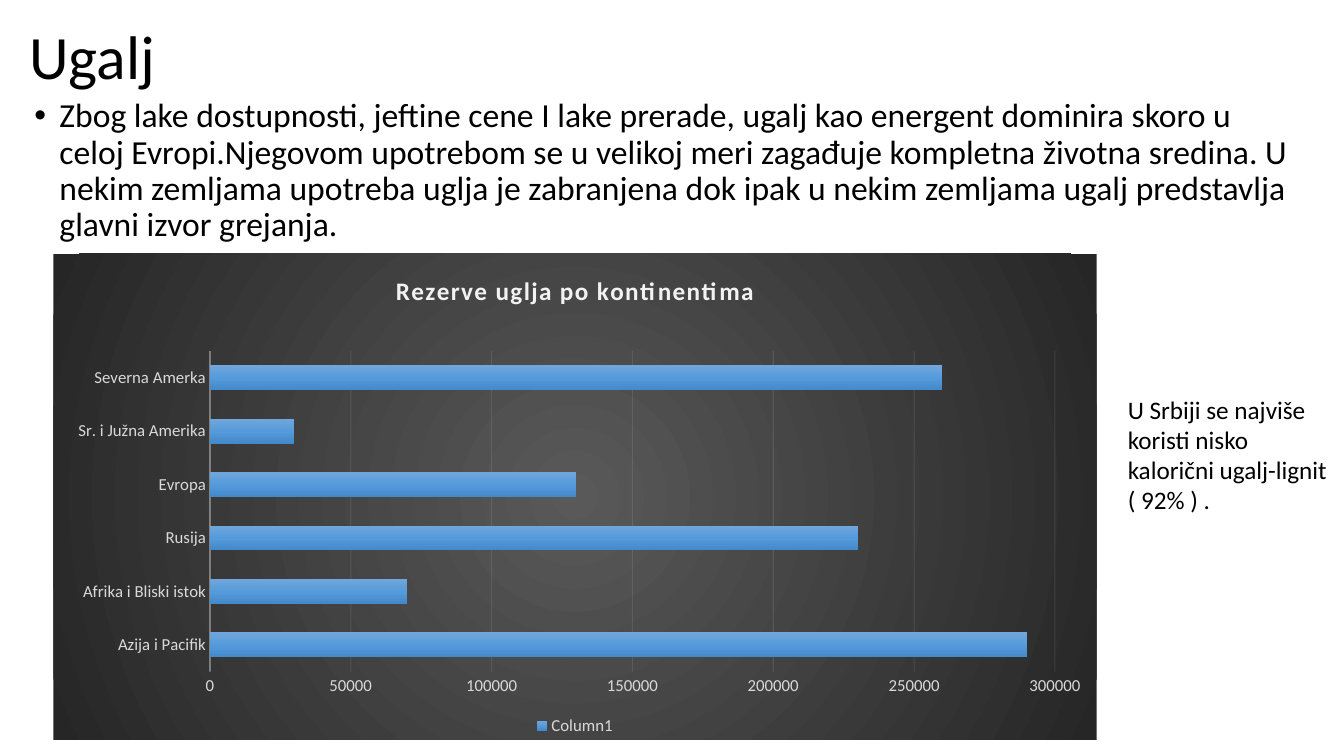
"""Build the coal slide: title, summary bullet, side remark and reserves chart."""
from dataclasses import dataclass

import pptx
import pptx.chart.data
import pptx.dml.color
import pptx.enum.chart
import pptx.enum.text
import pptx.oxml
import pptx.oxml.ns
import pptx.util

Pt = pptx.util.Pt


@dataclass(frozen=True)
class Theme:
    font: str = "Calibri"
    text: str = "000000"
    chart_title: str = "F2F2F2"
    chart_label: str = "D9D9D9"
    chart_line: str = "F2F2F2"
    backdrop: tuple = ((0, "595959"), (100, "262626"))
    bar: tuple = ((0, "71A6DB"), (50, "559BDB"), (100, "448ACA"))
    title_size: int = 44
    body_size: int = 24
    remark_size: int = 18
    chart_title_size: int = 18
    chart_label_size: int = 12


@dataclass(frozen=True)
class Box:
    left: float
    top: float
    width: float
    height: float

    def lengths(self) -> tuple:
        return Pt(self.left), Pt(self.top), Pt(self.width), Pt(self.height)


@dataclass(frozen=True)
class TextBlock:
    text: str
    box: Box
    size: int
    line_spacing: float
    bulleted: bool = False
    grows: bool = False


@dataclass(frozen=True)
class Reserve:
    region: str
    amount: int


THEME = Theme()
TITLE = TextBlock("Ugalj", Box(13.7, 15.1, 676.8, 103.7), THEME.title_size, 0.9)
SUMMARY = TextBlock(
    "Zbog lake dostupnosti, jeftine cene I lake prerade, ugalj kao energent dominira skoro u "
    "celoj Evropi.Njegovom upotrebom se u velikoj meri zagađuje kompletna životna sredina. U "
    "nekim zemljama upotreba uglja je zabranjena dok ipak u nekim zemljama ugalj predstavlja "
    "glavni izvor grejanja.",
    Box(17.3, 67, 918, 305.3), THEME.body_size, 0.9, bulleted=True)
REMARK = TextBlock(
    "U Srbiji se najviše koristi nisko kalorični ugalj-lignit ( 92% ) .",
    Box(798.5, 277.9, 161.3, 94.3), THEME.remark_size, 1.0, grows=True)
CHART_BOX = Box(38.2, 181.4, 745.2, 347)
PLOT_FRACTIONS = {"x": 0.15, "y": 0.2, "w": 0.81, "h": 0.66}
RESERVES = (
    Reserve("Azija i Pacifik", 290000),
    Reserve("Afrika i Bliski istok", 70000),
    Reserve("Rusija", 230000),
    Reserve("Evropa", 130000),
    Reserve("Sr. i Južna Amerika", 30000),
    Reserve("Severna Amerka", 260000),
)


def style_font(font, size: int, color: str) -> None:
    font.name = THEME.font
    font.size = Pt(size)
    font.color.rgb = pptx.dml.color.RGBColor.from_string(color)


def fill_text(shape, block: TextBlock) -> None:
    shape.left, shape.top, shape.width, shape.height = block.box.lengths()
    frame = shape.text_frame
    frame.text = block.text
    frame.word_wrap = True
    sizing = pptx.enum.text.MSO_AUTO_SIZE
    frame.auto_size = sizing.SHAPE_TO_FIT_TEXT if block.grows else sizing.NONE
    frame.vertical_anchor = pptx.enum.text.MSO_ANCHOR.TOP
    paragraph = frame.paragraphs[0]
    paragraph.alignment = pptx.enum.text.PP_ALIGN.LEFT
    paragraph.line_spacing = block.line_spacing
    paragraph.space_before = Pt(0)
    if block.bulleted:
        properties = paragraph._p.get_or_add_pPr()
        properties.set("marL", str(Pt(18)))
        properties.set("indent", str(Pt(-18)))
        namespaces = pptx.oxml.ns.nsdecls("a")
        for markup in (f'<a:buFont {namespaces} typeface="Arial"/>',
                       f'<a:buChar {namespaces} char="•"/>'):
            properties.append(pptx.oxml.parse_xml(markup))
    style_font(paragraph.runs[0].font, block.size, THEME.text)


def gradient(stops: tuple, direction: str):
    marks = "".join(f'<a:gs pos="{position * 1000}"><a:srgbClr val="{color}"/></a:gs>'
                    for position, color in stops)
    return pptx.oxml.parse_xml(f'<a:gradFill {pptx.oxml.ns.nsdecls("a")}>'
                               f'<a:gsLst>{marks}</a:gsLst>{direction}</a:gradFill>')


def style_line(line, width: float, opacity: int) -> None:
    line.width = Pt(width)
    line.color.rgb = pptx.dml.color.RGBColor.from_string(THEME.chart_line)
    color = line._get_or_add_ln().xpath(".//a:srgbClr")[0]
    color.append(pptx.oxml.parse_xml(
        f'<a:alpha {pptx.oxml.ns.nsdecls("a")} val="{opacity * 1000}"/>'))


def style_axes(chart) -> None:
    for axis in (chart.category_axis, chart.value_axis):
        axis.major_tick_mark = pptx.enum.chart.XL_TICK_MARK.NONE
        axis.minor_tick_mark = pptx.enum.chart.XL_TICK_MARK.NONE
        style_font(axis.tick_labels.font, THEME.chart_label_size, THEME.chart_label)
    style_line(chart.category_axis.format.line, 1, 54)
    values = chart.value_axis
    values.minimum_scale, values.maximum_scale, values.major_unit = 0, 300000, 50000
    values.format.line.fill.background()
    values.has_major_gridlines = True
    style_line(values.major_gridlines.format.line, 0.75, 10)


def style_surroundings(chart) -> None:
    namespaces = pptx.oxml.ns.nsdecls("c", "a")
    backdrop = pptx.oxml.parse_xml(f"<c:spPr {namespaces}><a:ln><a:noFill/></a:ln></c:spPr>")
    backdrop.insert(0, gradient(
        THEME.backdrop,
        '<a:path path="circle"><a:fillToRect l="50000" t="50000" r="50000" b="50000"/></a:path>'))
    chart._chartSpace.chart.addnext(backdrop)
    plot_area = chart._chartSpace.chart.plotArea
    for layout in plot_area.xpath("./c:layout"):
        plot_area.remove(layout)
    modes = '<c:layoutTarget val="inner"/><c:xMode val="edge"/><c:yMode val="edge"/>'
    fractions = "".join(f'<c:{key} val="{value}"/>' for key, value in PLOT_FRACTIONS.items())
    plot_area.insert(0, pptx.oxml.parse_xml(
        f"<c:layout {namespaces}><c:manualLayout>{modes}{fractions}"
        "</c:manualLayout></c:layout>"))


def add_reserves_chart(slide) -> None:
    data = pptx.chart.data.CategoryChartData()
    data.categories = [reserve.region for reserve in RESERVES]
    data.add_series("Column1", [reserve.amount for reserve in RESERVES])
    chart = slide.shapes.add_chart(
        pptx.enum.chart.XL_CHART_TYPE.BAR_CLUSTERED, *CHART_BOX.lengths(), data).chart
    style_font(chart.font, THEME.chart_label_size, THEME.chart_label)
    chart.has_title = True
    chart.chart_title.include_in_layout = False
    title = chart.chart_title.text_frame
    title.text = "Rezerve uglja po kontinentima"
    run = title.paragraphs[0].runs[0]
    style_font(run.font, THEME.chart_title_size, THEME.chart_title)
    run.font.bold = True
    run._r.get_or_add_rPr().set("spc", "100")
    chart.has_legend = True
    chart.legend.position = pptx.enum.chart.XL_LEGEND_POSITION.BOTTOM
    chart.legend.include_in_layout = False
    style_font(chart.legend.font, THEME.chart_label_size, THEME.chart_label)
    plot = chart.plots[0]
    plot.gap_width, plot.overlap, plot.vary_by_categories = 115, -20, False
    bars = plot.series[0]
    bars.format.fill.gradient()
    default_fill = bars._element.xpath("./c:spPr/a:gradFill")[0]
    default_fill.getparent().replace(
        default_fill, gradient(THEME.bar, '<a:lin ang="5400000" scaled="0"/>'))
    style_axes(chart)
    style_surroundings(chart)


def main() -> None:
    presentation = pptx.Presentation()
    presentation.slide_width, presentation.slide_height = Pt(960), Pt(540)
    slide = presentation.slides.add_slide(presentation.slide_layouts[1])
    fill_text(slide.shapes.title, TITLE)
    fill_text(slide.placeholders[1], SUMMARY)
    fill_text(slide.shapes.add_textbox(*REMARK.box.lengths()), REMARK)
    add_reserves_chart(slide)
    presentation.save("out.pptx")


if __name__ == "__main__":
    main()
